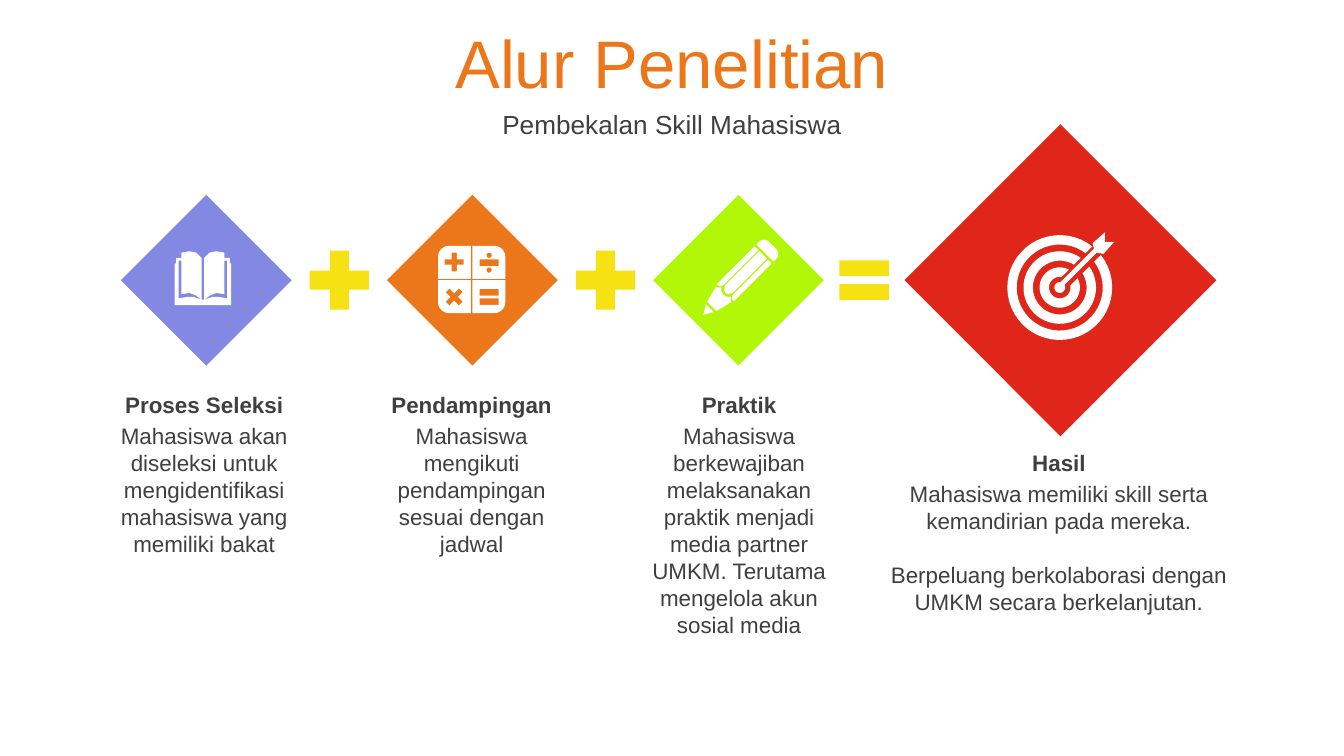
from dataclasses import dataclass
from math import asin, cos, degrees, radians, sin

from lxml.etree import SubElement
from pptx import Presentation
from pptx.dml.color import RGBColor
from pptx.enum.shapes import MSO_SHAPE as Preset
from pptx.enum.text import MSO_ANCHOR as Anchor, MSO_AUTO_SIZE as AutoSize, PP_ALIGN as Align
from pptx.oxml.ns import qn
from pptx.util import Inches, Pt

Point = tuple[float, float]
Contour = list[Point]


@dataclass(frozen=True)
class Theme:
    font: str = "Arial"
    accent: str = "EC771B"
    ink: str = "3F3F3F"
    sign: str = "F6E213"
    icon: str = "FFFFFF"
    title_size: int = 36
    subtitle_size: int = 14
    text_size: int = 12


@dataclass(frozen=True)
class Step:
    heading: str
    body: str
    colour: str
    center: float
    size: float
    caption_center: float
    caption_top: float
    caption_width: float
    body_height: float
    icon: list[Contour]
    icon_at: Point
    icon_turn: float = 0


THEME = Theme()
WIDTH = 10
HEIGHT = WIDTH * 9 / 16
SMALL, LARGE = 1.27, 2.32       # diamond sizes
AXIS = 1.45 + SMALL / 2         # centre line of the flow
FIRST, PITCH = 0.9 + SMALL / 2, 1.98
CAPTION_FIRST, CAPTION_PITCH = 1.52, 1.99


# Outline helpers, in inches
def arc(center: Point, radius: float, start: float, end: float, parts: int = 24) -> Contour:
    angles = [radians(start + (end - start) * i / parts) for i in range(parts + 1)]
    return [(center[0] + radius * cos(a), center[1] - radius * sin(a)) for a in angles]


def box(x: float, y: float, w: float, h: float) -> Contour:
    return [(x, y), (x + w, y), (x + w, y + h), (x, y + h)]


def mirror(points: Contour, x: float | None = None, y: float | None = None) -> Contour:
    return [(px if x is None else 2 * x - px, py if y is None else 2 * y - py)
            for px, py in points]


def cross(center: Point, reach: float, half: float, turn: float = 0) -> Contour:
    arm = [(half, half), (reach, half), (reach, -half)]
    return [(center[0] + x * cos(a) - y * sin(a), center[1] + x * sin(a) + y * cos(a))
            for a in (radians(turn - 90 * k) for k in range(4)) for x, y in arm]


# Icons
def book() -> list[Contour]:
    fold = 0.21
    cover = [(0.2, 0.36), (0.2, 0.05), (0.16, 0.01), (0.11, 0), (0.05, 0.01), (0.05, 0.05),
             (0.01, 0.05), (0.01, 0.09), (0, 0.09), (0, 0.4)]
    edge = [(0.2, 0.36), (0.16, 0.33), (0.11, 0.31), (0.05, 0.32), (0.05, 0.07),
            (0.03, 0.07), (0.03, 0.35), (0.09, 0.34), (0.14, 0.34)]
    return [cover + mirror(cover, x=fold)[::-1], edge, mirror(edge, x=fold)]


def calculator() -> list[Contour]:
    middle = 0.25
    key = arc((0.08, 0.08), 0.08, 180, 90, 6) + [(0.245, 0), (0.245, 0.245), (0, 0.245)]
    lower = mirror(key, y=middle)
    keys = [key, lower, mirror(key, x=middle), mirror(lower, x=middle)]
    bars = [box(0.31, y, 0.14, 0.05) for y in (0.1, 0.32, 0.39)]
    dots = [arc((0.38, y), 0.02, 0, 360, 12) for y in (0.07, 0.18)]
    return keys + bars + dots + [cross((0.12, 0.12), 0.07, 0.02),
                                 cross((0.12, 0.38), 0.07, 0.02, 45)]


def pencil() -> list[Contour]:
    eraser = (arc((0.05, 0.05), 0.05, 180, 90, 6) + arc((0.13, 0.05), 0.05, 90, 0, 6)
              + [(0.18, 0.08), (0, 0.08)])
    side = [(0, 0.1), (0.04, 0.1), (0.04, 0.46), (0.03, 0.49), (0, 0.5)]
    core = [(0.05, 0.1), (0.13, 0.1), (0.13, 0.46), (0.11, 0.49), (0.09, 0.5),
            (0.07, 0.49), (0.05, 0.46)]
    wood = [(0.01, 0.52), (0.04, 0.49), (0.06, 0.51), (0.09, 0.52), (0.12, 0.51),
            (0.14, 0.49), (0.17, 0.52), (0.14, 0.64), (0.04, 0.64)]
    lead = [(0.05, 0.66), (0.13, 0.66), (0.09, 0.73)]
    return [eraser, side, mirror(side, x=0.09), core, wood, lead]


def target() -> list[Contour]:
    center, slit = (0.385, 0.41), 0.045

    def ring(outer: float, inner: float) -> Contour:
        gaps = [degrees(asin(slit / r)) for r in (outer, inner)]
        rims = [arc(center, r, 45 + gap, 405 - gap, 48)
                for r, gap in zip((outer, inner), gaps)]
        return rims[0] + rims[1][::-1]

    arrow = [(0.39, 0.37), (0.64, 0.12), (0.63, 0.08), (0.72, 0), (0.72, 0.07),
             (0.79, 0.07), (0.71, 0.16), (0.66, 0.15), (0.42, 0.39)]
    return [ring(0.39, 0.32), ring(0.27, 0.2), ring(0.15, 0.08),
            arrow + arc(center, 0.04, 30, -284)]


# Drawing
def paint(shape, colour: str) -> None:
    shape.shadow.inherit = False
    shape.fill.solid()
    shape.fill.fore_color.rgb = RGBColor.from_string(colour)
    shape.line.fill.background()


def draw_preset(shapes, preset: Preset, center: float, size: float, colour: str,
                adjustments: tuple[float, ...] = ()) -> None:
    shape = shapes.add_shape(preset, Inches(center - size / 2), Inches(AXIS - size / 2),
                             Inches(size), Inches(size))
    for i, value in enumerate(adjustments):
        shape.adjustments[i] = value
    paint(shape, colour)


def draw_icon(shapes, step: Step) -> None:
    left, top = step.icon_at
    contours = [[(Inches(left + x), Inches(top + y)) for x, y in c] for c in step.icon]
    builder = shapes.build_freeform(*contours[0][0])
    for i, contour in enumerate(contours):
        if i:
            builder.move_to(*contour[0])
        builder.add_line_segments(contour[1:], close=True)
    icon = builder.convert_to_shape()
    icon.rotation = step.icon_turn
    paint(icon, THEME.icon)


def write(frame, text: str, size: int, colour: str, bold: bool = False) -> None:
    frame.text = text
    frame.word_wrap = True
    for i, paragraph in enumerate(frame.paragraphs):
        paragraph.alignment = Align.CENTER
        paragraph.space_before = Pt(size * 1.2 if i else 0)
        for run in paragraph.runs:
            run.font.name, run.font.size, run.font.bold = THEME.font, Pt(size), bold
            run.font.color.rgb = RGBColor.from_string(colour)


def draw_heading(holder, top: float, height: float, text: str, size: int, colour: str) -> None:
    holder.left, holder.top = 0, Inches(top)
    holder.width, holder.height = Inches(WIDTH), Inches(height)
    write(holder.text_frame, text, size, colour)
    holder.text_frame.auto_size = AutoSize.NONE
    holder.text_frame.vertical_anchor = Anchor.MIDDLE


def draw_caption(shapes, step: Step) -> None:
    left = step.caption_center - step.caption_width / 2
    for text, drop, height, bold in ((step.body, 0.235, step.body_height, False),
                                     (step.heading, 0, 0.3, True)):
        caption = shapes.add_textbox(Inches(left), Inches(step.caption_top + drop),
                                     Inches(step.caption_width), Inches(height))
        write(caption.text_frame, text, THEME.text_size, THEME.ink, bold)
        caption.text_frame.auto_size = AutoSize.SHAPE_TO_FIT_TEXT


def small_step(column: int, heading: str, body: str, colour: str, body_height: float,
               icon: list[Contour], icon_at: Point, icon_turn: float = 0) -> Step:
    return Step(heading, body, colour, FIRST + column * PITCH, SMALL,
                CAPTION_FIRST + column * CAPTION_PITCH, 2.86, 1.53, body_height,
                icon, icon_at, icon_turn)


STEPS = [
    small_step(0, "Proses Seleksi", "Mahasiswa akan diseleksi untuk mengidentifikasi "
               "mahasiswa yang memiliki bakat", "8388E3", 1.11, book(), (1.3, 1.87)),
    small_step(1, "Pendampingan", "Mahasiswa mengikuti pendampingan sesuai dengan jadwal",
               THEME.accent, 1.11, calculator(), (3.26, 1.83)),
    small_step(2, "Praktik", "Mahasiswa berkewajiban melaksanakan praktik menjadi media "
               "partner UMKM. Terutama mengelola akun sosial media",
               "B2F608", 1.72, pencil(), (5.4, 1.72), 45),
    Step("Hasil", "Mahasiswa memiliki skill serta kemandirian pada mereka.\n"
         "Berpeluang berkolaborasi dengan UMKM secara berkelanjutan.",
         "DF2619", 6.73 + LARGE / 2, LARGE, 7.88, 3.29, 2.9, 1.11, target(), (7.5, 1.73)),
]


def main() -> None:
    deck = Presentation()
    deck.slide_width, deck.slide_height = Inches(WIDTH), Inches(HEIGHT)
    slide = deck.slides.add_slide(deck.slide_layouts[1])
    shapes = slide.shapes

    # Title and subtitle
    subtitle = slide.placeholders[1]
    draw_heading(shapes.title, 0.14, 0.63, "Alur Penelitian", THEME.title_size, THEME.accent)
    draw_heading(subtitle, 0.77, 0.31, "Pembekalan Skill Mahasiswa",
                 THEME.subtitle_size, THEME.ink)
    plain = subtitle.text_frame.paragraphs[0]._p.get_or_add_pPr()
    plain.set("marL", "0")
    plain.set("indent", "0")
    SubElement(plain, qn("a:buNone"))

    # Diamonds, icons and captions
    for step in STEPS:
        draw_preset(shapes, Preset.DIAMOND, step.center, step.size, step.colour)
        draw_icon(shapes, step)
        draw_caption(shapes, step)

    # Signs halfway between neighbouring diamonds
    for before, after in zip(STEPS, STEPS[1:]):
        middle = (before.center + before.size / 2 + after.center - after.size / 2) / 2
        if after is STEPS[-1]:
            draw_preset(shapes, Preset.MATH_EQUAL, middle, 0.5, THEME.sign, (0.235, 0.118))
        else:
            draw_preset(shapes, Preset.MATH_PLUS, middle, 0.6, THEME.sign, (0.235,))

    deck.save("out.pptx")


if __name__ == "__main__":
    main()
